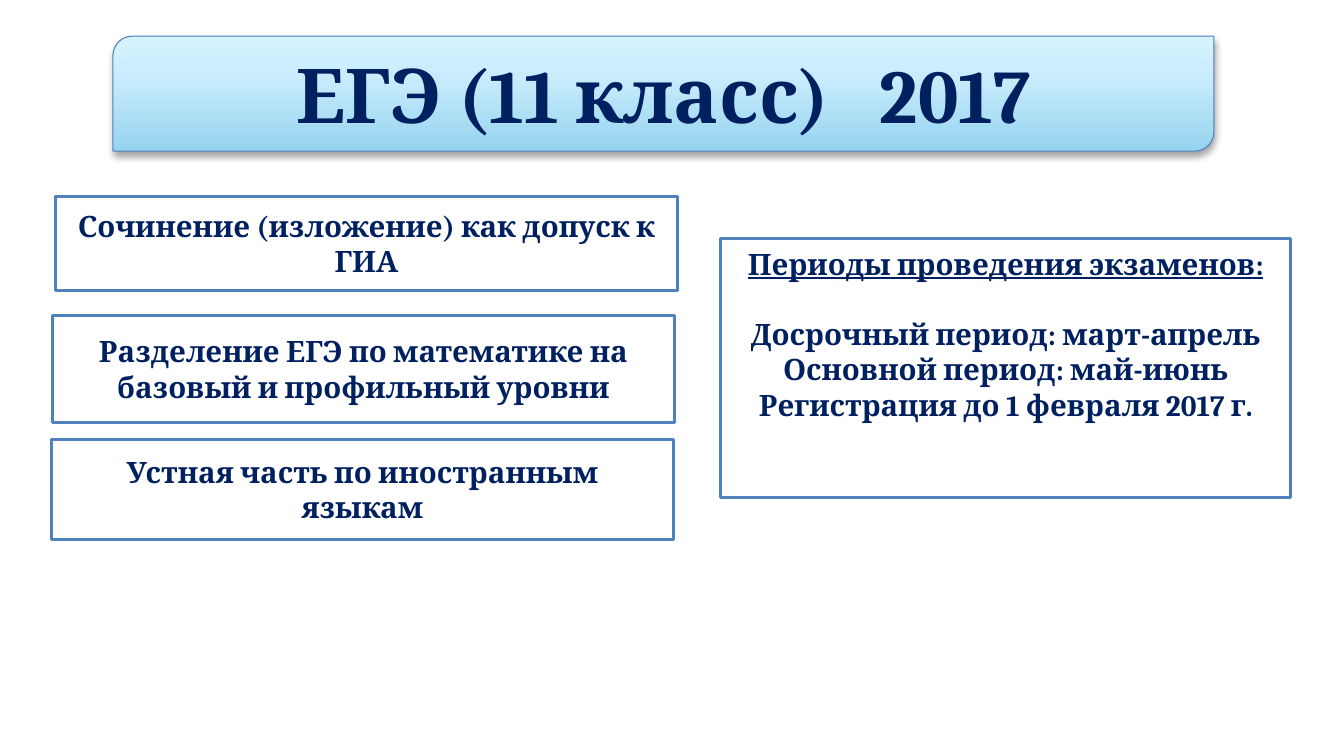
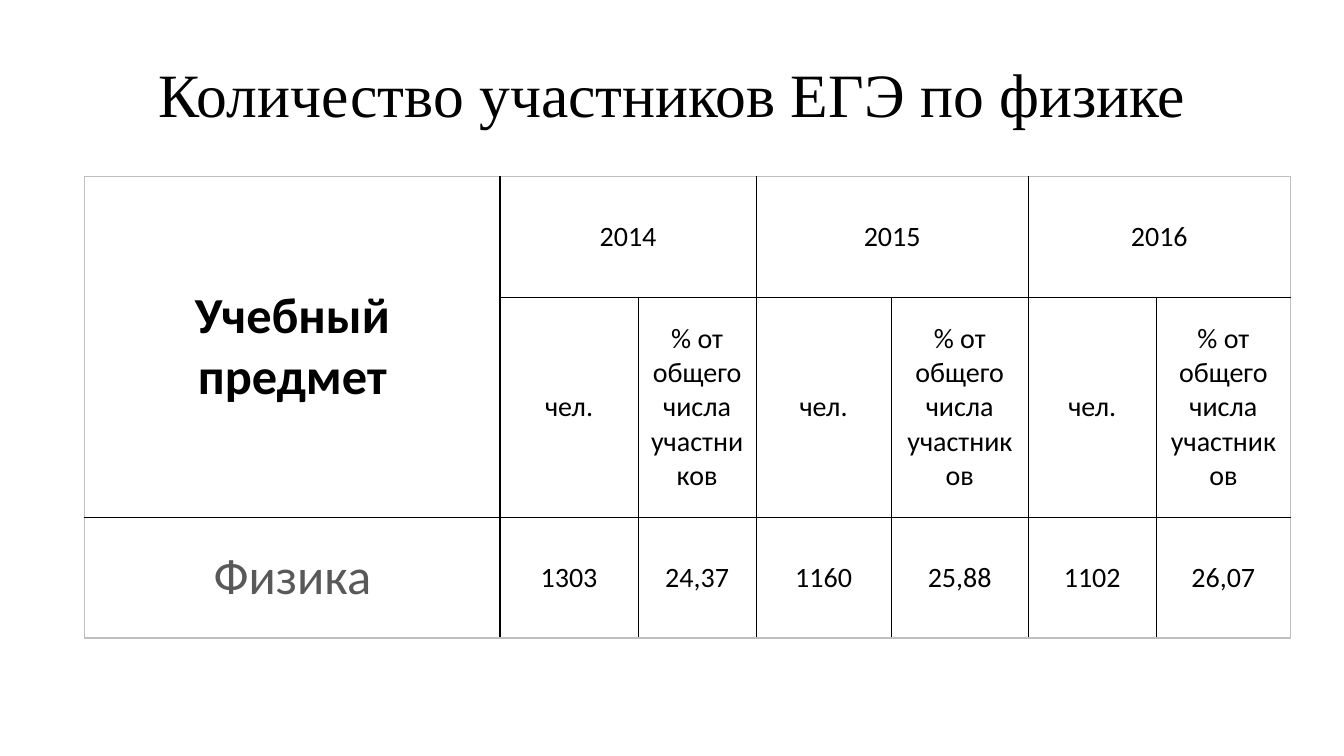
from dataclasses import dataclass

from pptx import Presentation
from pptx.dml.color import RGBColor
from pptx.enum.shapes import MSO_SHAPE as Preset
from pptx.enum.text import MSO_ANCHOR as Anchor, PP_ALIGN as Align
from pptx.oxml import parse_xml
from pptx.oxml.ns import nsdecls, qn
from pptx.util import Inches, Pt


@dataclass(frozen=True)
class Theme:
    navy: str = "002060"
    blue: str = "4F81BD"
    white: str = "FFFFFF"
    black: str = "000000"
    grey: str = "595959"
    edge: str = "BFBFBF"
    banner_stops: tuple = ((0, "95D4EE"), (65, "C9ECFD"), (100, "D6F3FF"))
    banner_font: str = "Cambria"
    title_font: str = "Times New Roman"
    table_font: str = "Calibri"
    banner_size: int = 54
    title_size: int = 44
    subject_size: int = 36
    box_size: int = 21
    cell_size: int = 20
    box_line: int = 2
    banner_line: float = 0.75
    cell_line: int = 1


THEME = Theme()

BANNER_AREA = (1.12, 0.36, 10.92, 1.14)
TITLE_AREA = (0.67, 0.3, 12, 1.25)
FACTS = (
    ("Сочинение (изложение) как допуск к ГИА", (0.55, 1.95, 6.17, 0.93)),
    ("Разделение ЕГЭ по математике на базовый и профильный уровни",
     (0.52, 3.13, 6.17, 1.06)),
    ("Устная часть по иностранным языкам", (0.51, 4.36, 6.17, 0.99)),
)
PERIODS_AREA = (7.15, 2.37, 5.65, 2.57)
PERIODS = (
    "Периоды проведения экзаменов:",
    "Досрочный период: март-апрель",
    "Основной период: май-июнь",
    "Регистрация до 1 февраля 2017 г.",
)
TABLE_LEFT, TABLE_TOP = 0.84, 1.75
COLUMN_WIDTHS = (4.12, 1.37, 1.17, 1.34, 1.36, 1.27, 1.33)
ROW_HEIGHTS = (1.2, 2.18, 1.2)
SUBJECT_HEADING = "Учебный предмет"
SUBJECT = "Физика"
UNITS = ("чел.", "% от общего числа участников")
RESULTS = {
    "2014": ("1303", "24,37"),
    "2015": ("1160", "25,88"),
    "2016": ("1102", "26,07"),
}


def inches(area):
    return [Inches(value) for value in area]


def format_text(frame, font, size, color, bold=False, anchor=Anchor.MIDDLE):
    frame.word_wrap = True
    frame.vertical_anchor = anchor
    for para in frame.paragraphs:
        para.alignment = Align.CENTER
        for span in para.runs:
            span.font.name = font
            span.font.size = Pt(size)
            span.font.bold = bold
            span.font.color.rgb = RGBColor.from_string(color)


def set_line(shape, width):
    shape.line.color.rgb = RGBColor.from_string(THEME.blue)
    shape.line.width = Pt(width)


def add_page(deck, title, area, font, size, color, bold=False):
    """Add a title-only slide and format its title."""
    page = deck.slides.add_slide(deck.slide_layouts[5])
    heading = page.shapes.title
    heading.left, heading.top, heading.width, heading.height = inches(area)
    heading.text_frame.text = title
    format_text(heading.text_frame, font, size, color, bold)
    return page


def add_banner(page, area):
    """Put a shaded gradient plate with two round corners behind the title."""
    banner = page.shapes.add_shape(Preset.ROUND_2_DIAG_RECTANGLE, *inches(area))
    set_line(banner, THEME.banner_line)
    banner.shadow.inherit = False
    stops = "".join(
        f'<a:gs pos="{position * 1000}"><a:srgbClr val="{color}"/></a:gs>'
        for position, color in THEME.banner_stops)
    properties = banner.element.spPr
    properties.find(qn("a:prstGeom")).addnext(parse_xml(
        f'<a:gradFill {nsdecls("a")} rotWithShape="1"><a:gsLst>{stops}</a:gsLst>'
        '<a:lin ang="16200000" scaled="0"/></a:gradFill>'))
    properties.find(qn("a:effectLst")).append(parse_xml(
        f'<a:outerShdw {nsdecls("a")} blurRad="{Pt(5)}" dist="{Pt(3)}" '
        f'dir="5400000" rotWithShape="0"><a:srgbClr val="{THEME.black}">'
        '<a:alpha val="35000"/></a:srgbClr></a:outerShdw>'))
    page.shapes.title.element.addprevious(banner.element)


def add_box(page, lines, area, anchor=Anchor.MIDDLE):
    box = page.shapes.add_shape(Preset.RECTANGLE, *inches(area))
    box.shadow.inherit = False
    box.fill.solid()
    box.fill.fore_color.rgb = RGBColor.from_string(THEME.white)
    set_line(box, THEME.box_line)
    frame = box.text_frame
    frame.margin_left = frame.margin_right = Inches(0.13)
    frame.margin_top = frame.margin_bottom = Inches(0.07)
    frame.text = "\n".join(lines)
    format_text(frame, THEME.banner_font, THEME.box_size, THEME.navy, True, anchor)
    return box


def set_cell(cell, text, size=THEME.cell_size, color=THEME.black, bold=False):
    cell.text_frame.text = text
    format_text(cell.text_frame, THEME.table_font, size, color, bold)
    cell.vertical_anchor = Anchor.MIDDLE


def set_borders(cell, row, column):
    """Draw grey lines on the rim of the table and black ones inside it."""
    on_rim = {
        "L": column == 0,
        "R": column + cell.span_width == len(COLUMN_WIDTHS),
        "T": row == 0,
        "B": row + cell.span_height == len(ROW_HEIGHTS),
    }
    properties = cell._tc.get_or_add_tcPr()
    for index, (side, rim) in enumerate(on_rim.items()):
        color = THEME.edge if rim else THEME.black
        properties.insert(index, parse_xml(
            f'<a:ln{side} {nsdecls("a")} w="{Pt(THEME.cell_line)}"><a:solidFill>'
            f'<a:srgbClr val="{color}"/></a:solidFill></a:ln{side}>'))


def add_results_table(page):
    area = (TABLE_LEFT, TABLE_TOP, sum(COLUMN_WIDTHS), sum(ROW_HEIGHTS))
    table = page.shapes.add_table(
        len(ROW_HEIGHTS), len(COLUMN_WIDTHS), *inches(area)).table
    table.first_row = table.horz_banding = False
    for column, width in zip(table.columns, COLUMN_WIDTHS):
        column.width = Inches(width)
    for row, height in zip(table.rows, ROW_HEIGHTS):
        row.height = Inches(height)

    table.cell(0, 0).merge(table.cell(1, 0))
    set_cell(table.cell(0, 0), SUBJECT_HEADING, THEME.subject_size, bold=True)
    set_cell(table.cell(2, 0), SUBJECT, THEME.subject_size, THEME.grey)
    for group, (year, values) in enumerate(RESULTS.items()):
        first = 1 + group * len(UNITS)
        table.cell(0, first).merge(table.cell(0, first + len(UNITS) - 1))
        set_cell(table.cell(0, first), year)
        for column, (unit, value) in enumerate(zip(UNITS, values), first):
            set_cell(table.cell(1, column), unit)
            set_cell(table.cell(2, column), value)

    for row in range(len(ROW_HEIGHTS)):
        for column in range(len(COLUMN_WIDTHS)):
            cell = table.cell(row, column)
            cell.fill.solid()
            cell.fill.fore_color.rgb = RGBColor.from_string(THEME.white)
            if not cell.is_spanned:
                set_borders(cell, row, column)


def build_exam_page(deck):
    page = add_page(deck, "ЕГЭ (11 класс)   2017", BANNER_AREA,
                    THEME.banner_font, THEME.banner_size, THEME.navy, True)
    add_banner(page, BANNER_AREA)
    for text, area in FACTS:
        add_box(page, [text], area)
    periods = add_box(page, PERIODS, PERIODS_AREA, Anchor.TOP)
    heading = periods.text_frame.paragraphs[0]
    heading.runs[0].font.underline = True
    heading.space_after = Pt(25)


def build_participants_page(deck):
    page = add_page(deck, "Количество участников ЕГЭ по физике", TITLE_AREA,
                    THEME.title_font, THEME.title_size, THEME.black)
    add_results_table(page)


def main():
    deck = Presentation()
    deck.slide_width, deck.slide_height = Inches(13.33), Inches(7.5)
    build_exam_page(deck)
    build_participants_page(deck)
    deck.save("out.pptx")


if __name__ == "__main__":
    main()
